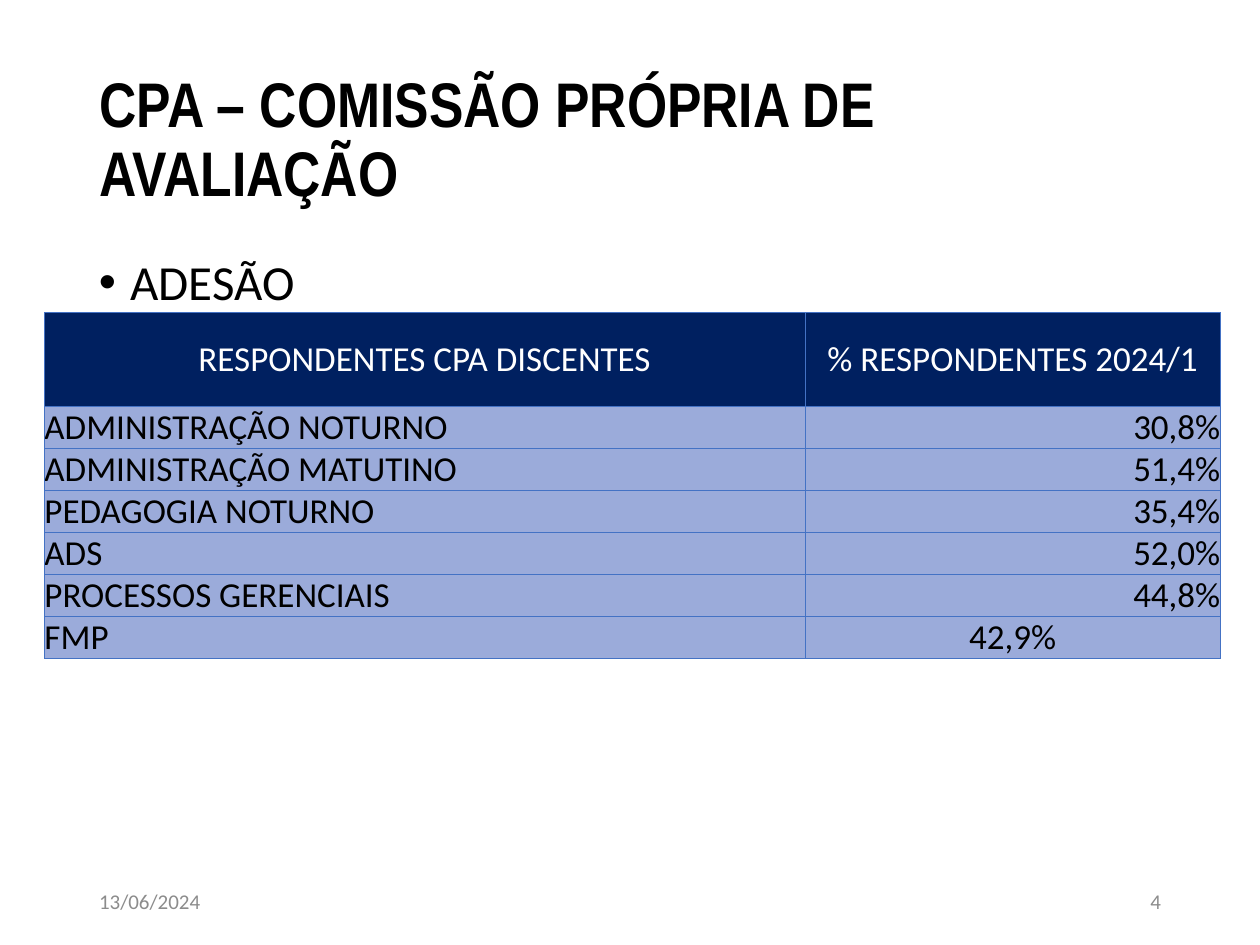
from lxml.etree import SubElement
from pptx import Presentation
from pptx.dml.color import RGBColor
from pptx.enum.text import MSO_ANCHOR as Anchor, PP_ALIGN as Align
from pptx.oxml.ns import qn
from pptx.util import Pt

COLORS = {
    "text": "000000",
    "header_text": "FFFFFF",
    "footer": "8C8C8C",
    "header_fill": "002060",
    "row_fill": "9BABDA",
    "border": "4472C4",
}
HEADER = ("RESPONDENTES CPA DISCENTES", "% RESPONDENTES 2024/1")
RESPONSES = [
    ("ADMINISTRAÇÃO NOTURNO", "30,8%"),
    ("ADMINISTRAÇÃO MATUTINO", "51,4%"),
    ("PEDAGOGIA NOTURNO", "35,4%"),
    ("ADS", "52,0%"),
    ("PROCESSOS GERENCIAIS", "44,8%"),
    ("FMP", "42,9%"),
]


class SlideBuilder:
    body_font = "Calibri"
    title_font = "Arial Narrow"

    def __init__(self, deck):
        self.page = deck.slides.add_slide(deck.slide_layouts[5])

    def format(self, para, size, color, align=Align.LEFT, font=None, bold=False):
        para.alignment = align
        para.font.name = font or self.body_font
        para.font.size = Pt(size)
        para.font.bold = bold
        para.font.color.rgb = RGBColor.from_string(COLORS[color])

    def title(self, text, left, top, width, height):
        box = self.page.shapes.title
        box.left, box.top, box.width, box.height = map(Pt, (left, top, width, height))
        box.text_frame.text = text
        box.text_frame.word_wrap = True
        box.text_frame.vertical_anchor = Anchor.MIDDLE
        para = box.text_frame.paragraphs[0]
        para.line_spacing = 0.9
        self.format(para, 36, "text", font=self.title_font, bold=True)

    def text(self, text, left, top, width, height, size, color,
             align=Align.LEFT, anchor=Anchor.MIDDLE):
        box = self.page.shapes.add_textbox(*map(Pt, (left, top, width, height)))
        frame = box.text_frame
        frame.word_wrap = True
        frame.vertical_anchor = anchor
        frame.text = text
        para = frame.paragraphs[0]
        self.format(para, size, color, align)
        return para

    def bullet(self, text, left, top, width, height):
        para = self.text(text, left, top, width, height, 28, "text", anchor=Anchor.TOP)
        para.line_spacing = 0.9
        properties = para._p.get_or_add_pPr()
        properties.set("marL", str(Pt(18)))
        properties.set("indent", str(Pt(-18)))
        font = properties.find(qn("a:defRPr"))
        face = SubElement(properties, qn("a:buFont"), typeface="Arial")
        mark = SubElement(properties, qn("a:buChar"), char="•")
        if font is not None:
            font.addprevious(face)
            font.addprevious(mark)

    def cell(self, cell, text, color, fill, align, anchor):
        cell.text = text
        cell.vertical_anchor = anchor
        cell.margin_left = cell.margin_right = cell.margin_top = cell.margin_bottom = 0
        self.format(cell.text_frame.paragraphs[0], 20, color, align)
        properties = cell._tc.get_or_add_tcPr()
        for side in ("a:lnL", "a:lnR", "a:lnT", "a:lnB"):
            line = SubElement(properties, qn(side), w=str(Pt(0.5)))
            solid = SubElement(line, qn("a:solidFill"))
            SubElement(solid, qn("a:srgbClr"), val=COLORS["border"])
        cell.fill.solid()
        cell.fill.fore_color.rgb = RGBColor.from_string(COLORS[fill])

    def table(self, header, rows, left, top, widths, header_height, row_height):
        height = header_height + row_height * len(rows)
        frame = self.page.shapes.add_table(
            len(rows) + 1, len(header), *map(Pt, (left, top, sum(widths), height)))
        table = frame.table
        for column, width in zip(table.columns, widths):
            column.width = Pt(width)
        for index, row in enumerate(table.rows):
            row.height = Pt(row_height if index else header_height)
        for column, text in enumerate(header):
            self.cell(table.cell(0, column), text, "header_text", "header_fill",
                      Align.CENTER, Anchor.MIDDLE)
        for index, (course, share) in enumerate(rows, 1):
            share_align = Align.CENTER if index == len(rows) else Align.RIGHT
            for column, (text, align) in enumerate(((course, Align.LEFT), (share, share_align))):
                self.cell(table.cell(index, column), text, "text", "row_fill",
                          align, Anchor.BOTTOM)


def main():
    deck = Presentation()
    deck.slide_width, deck.slide_height = Pt(720), Pt(540)
    slide = SlideBuilder(deck)
    slide.text("13/06/2024", 49.5, 500.5, 162, 28.75, 12, "footer")
    slide.text("4", 508.5, 500.5, 162, 28.75, 12, "footer", Align.RIGHT)
    slide.title("CPA – COMISSÃO PRÓPRIA DE AVALIAÇÃO", 49.5, 28.75, 621, 104.4)
    slide.bullet("ADESÃO", 49.5, 143.75, 621, 342.6)
    slide.table(HEADER, RESPONSES, 25.4, 178.6, (434.6, 237.4), 53.4, 20.9)
    deck.save("out.pptx")


if __name__ == "__main__":
    main()
